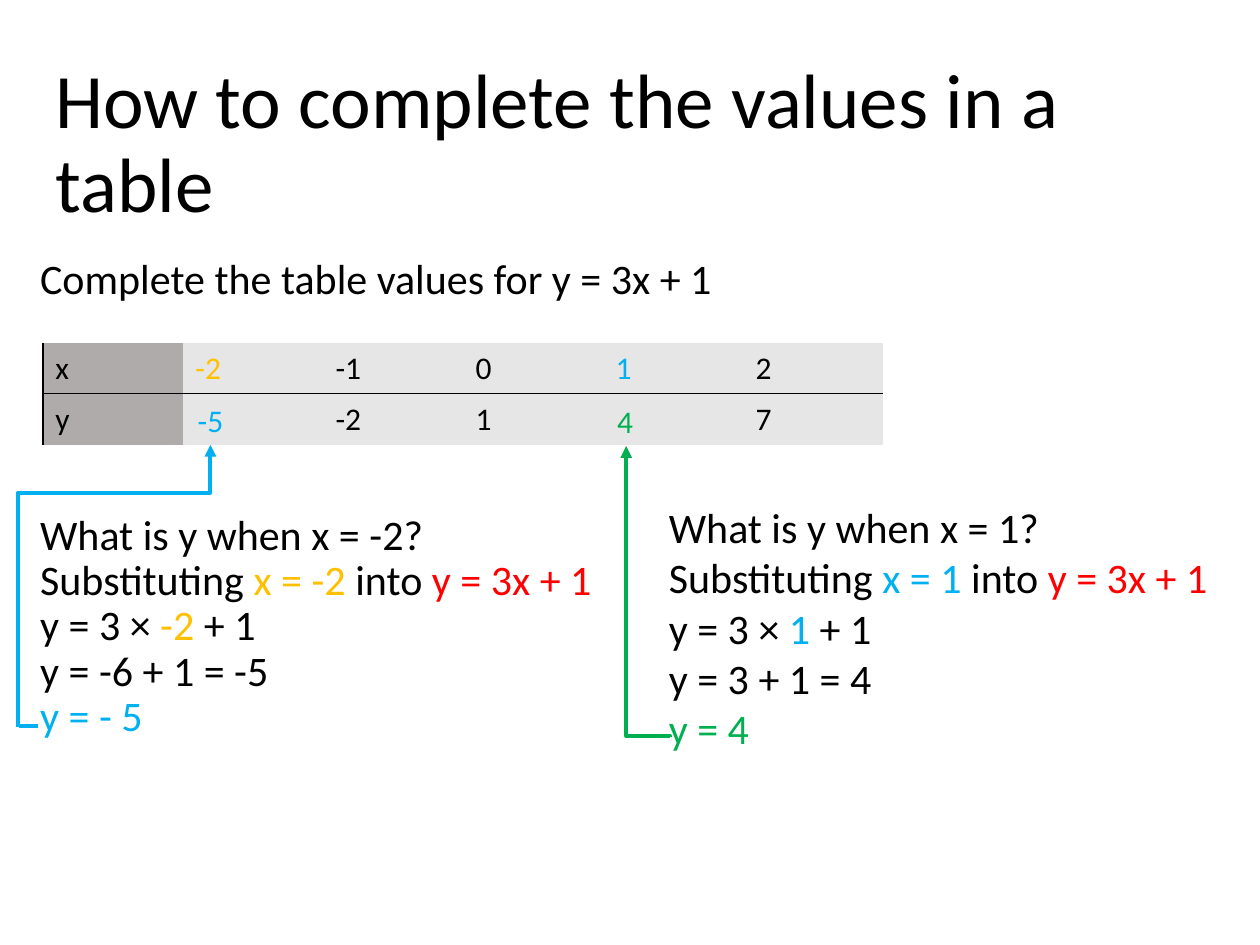
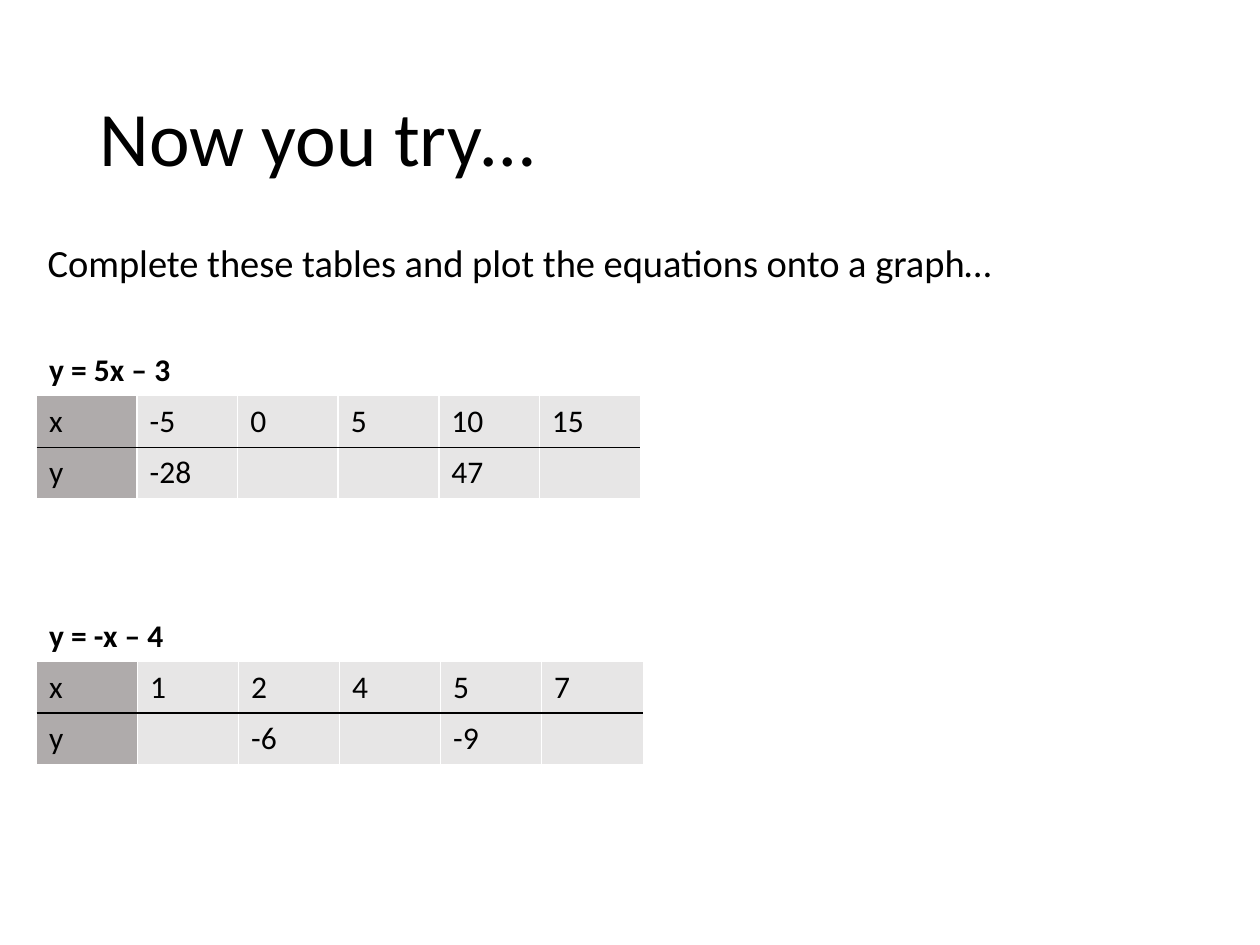
from dataclasses import dataclass

from lxml import etree
from pptx import Presentation
from pptx.dml.color import RGBColor
from pptx.enum import shapes, text
from pptx.oxml import ns
from pptx.util import Inches, Pt


@dataclass(frozen=True)
class Theme:
    font: str = "Calibri"
    black: str = "000000"
    white: str = "FFFFFF"
    header_grey: str = "AFABAB"
    cell_grey: str = "E7E6E6"
    amber: str = "FFC000"
    blue: str = "00B0F0"
    green: str = "00B050"
    red: str = "FF0000"
    title_size: int = 44
    body_size: int = 24
    task_size: int = 22
    table_size: int = 18
    rule_width: float = 1
    arrow_width: float = 2.25
    row_height: float = 0.405


THEME = Theme()
NO_STYLE_NO_GRID = "{2D5ABB26-0587-4C30-8999-92F81FD0307C}"


def style_span(span, size, colour=THEME.black, bold=False):
    span.font.name = THEME.font
    span.font.size = Pt(size)
    span.font.bold = bold
    span.font.color.rgb = RGBColor.from_string(colour)


def add_text(page, area, lines, size=THEME.body_size, spacing=1.0,
             anchor=text.MSO_ANCHOR.TOP, wrap=True):
    """Each line is a list of (words, colour) pairs."""
    box = page.shapes.add_textbox(*map(Inches, area))
    frame = box.text_frame
    frame.word_wrap = wrap
    frame.vertical_anchor = anchor
    for index, line in enumerate(lines):
        para = frame.paragraphs[0] if index == 0 else frame.add_paragraph()
        para.line_spacing = spacing
        for words, colour in line:
            span = para.add_run()
            span.text = words
            style_span(span, size, colour)


def add_title(page, area, words):
    add_text(page, area, [[(words, THEME.black)]], THEME.title_size, 0.9,
             text.MSO_ANCHOR.MIDDLE)


def set_border(cell, side, colour):
    """Draw one side of a cell: L, R, T or B."""
    line = etree.Element(ns.qn(f"a:ln{side}"), w=str(Pt(THEME.rule_width)))
    fill = etree.SubElement(line, ns.qn("a:solidFill"))
    etree.SubElement(fill, ns.qn("a:srgbClr"), val=colour)
    properties = cell._tc.get_or_add_tcPr()
    borders = properties.findall(ns.qn("a:lnL")) + properties.findall(ns.qn("a:lnR"))
    borders += properties.findall(ns.qn("a:lnT"))
    properties.insert(len(borders), line)


def fill_cell(cell, words, fill, colour=THEME.black, bold=False):
    cell.fill.solid()
    cell.fill.fore_color.rgb = RGBColor.from_string(fill)
    cell.text_frame.text = words
    for span in cell.text_frame.paragraphs[0].runs:
        style_span(span, THEME.table_size, colour, bold)


def add_value_table(page, left, top, width, x_values, y_values,
                    caption=None, x_colours=None):
    """Draw x over y; a captioned table also has white column rules."""
    rows = [["x", *x_values], ["y", *y_values]]
    first = 1 if caption else 0
    count = len(rows[0])
    height = THEME.row_height * (len(rows) + first)
    frame = page.shapes.add_table(len(rows) + first, count, Inches(left),
                                  Inches(top), Inches(width), Inches(height))
    table = frame.table
    table.first_row = table.horz_banding = False
    table._tbl.tblPr.find(ns.qn("a:tableStyleId")).text = NO_STYLE_NO_GRID
    if caption:
        table.cell(0, 0).merge(table.cell(0, count - 1))
        fill_cell(table.cell(0, 0), caption, THEME.white, bold=True)
    for r, values in enumerate(rows):
        for c, value in enumerate(values):
            cell = table.cell(r + first, c)
            fill = THEME.header_grey if c == 0 else THEME.cell_grey
            colours = x_colours if r == 0 and x_colours else {}
            fill_cell(cell, value, fill, colours.get(value, THEME.black))
            if caption and c > 0:
                set_border(cell, "L", THEME.white)
            elif not caption and c == 0:
                set_border(cell, "L", THEME.black)
            if caption and 0 < c < count - 1:
                set_border(cell, "R", THEME.white)
            set_border(cell, "B" if r == 0 else "T", THEME.black)


def add_line(page, kind, start, end, colour):
    line = page.shapes.add_connector(kind, *map(Inches, (*start, *end)))
    line.line.color.rgb = RGBColor.from_string(colour)
    line.line.width = Pt(THEME.arrow_width)
    etree.SubElement(line._element.spPr, ns.qn("a:effectLst"))
    return line


def add_rising_arrow(page, start, end, bend, colour):
    """Go up, across at the bend (a share of the rise), then up to the end."""
    (x1, y1), (x2, y2) = start, end
    middle_x, middle_y = (x1 + x2) / 2, (y1 + y2) / 2
    half_x, half_y = (x2 - x1) / 2, (y2 - y1) / 2
    # The elbow runs sideways until it is turned by 270 degrees.
    arrow = add_line(page, shapes.MSO_CONNECTOR.ELBOW,
                     (middle_x + half_y, middle_y - half_x),
                     (middle_x - half_y, middle_y + half_x), colour)
    properties = arrow._element.spPr
    properties.find(ns.qn("a:xfrm")).set("rot", str(270 * 60000))
    geometry = properties.find(ns.qn("a:prstGeom"))
    guides = geometry.find(ns.qn("a:avLst"))
    if guides is None:
        guides = etree.SubElement(geometry, ns.qn("a:avLst"))
    etree.SubElement(guides, ns.qn("a:gd"), name="adj1",
                     fmla=f"val {round(bend * 100000)}")
    etree.SubElement(arrow.line._get_or_add_ln(), ns.qn("a:tailEnd"), type="triangle")


def working_lines(x, x_colour, sum_line, answer, answer_colour):
    black = THEME.black
    return [
        [(f"What is y when x = {x}?", black)],
        [("Substituting ", black), (f"x = {x} ", x_colour),
         ("into ", black), ("y = 3x + 1", THEME.red)],
        [("y = 3 × ", black), (x, x_colour), (" + 1", black)],
        [(sum_line, black)],
        [(answer, answer_colour)],
    ]


def build_example(page):
    add_title(page, (0.34, 0.43, 8.25, 1.45), "How to complete the values in a table")
    add_text(page, (0.22, 2, 9.5, 0.5),
             [[("Complete the table values for y = 3x + 1", THEME.black)]], spacing=0.9)
    add_text(page, (0.22, 4.03, 4.75, 2),
             working_lines("-2", THEME.amber, "y = -6 + 1 = -5", "y = - 5", THEME.blue),
             spacing=0.9)
    add_value_table(page, 0.34, 2.72, 6.67, ["-2", "-1", "0", "1", "2"],
                    ["", "-2", "1", "", "7"],
                    x_colours={"-2": THEME.amber, "1": THEME.blue})
    for area, answer, colour in (((1.47, 3.13, 0.41, 0.4), "-5", THEME.blue),
                                 ((4.8, 3.14, 0.33, 0.4), "4", THEME.green)):
        add_text(page, area, [[(answer, colour)]], THEME.table_size, wrap=False)
    add_text(page, (5.21, 3.93, 4.51, 2.93),
             working_lines("1", THEME.blue, "y = 3 + 1 = 4", "y = 4", THEME.green),
             wrap=False)
    add_rising_arrow(page, (0.14, 5.77), (1.67, 3.53), 0.83, THEME.blue)
    add_rising_arrow(page, (5.32, 5.85), (4.97, 3.54), 0.004, THEME.green)
    add_line(page, shapes.MSO_CONNECTOR.STRAIGHT, (0.15, 5.76), (0.3, 5.76), THEME.blue)


def build_exercise(page):
    add_title(page, (0.69, 0.4, 8.62, 1.45), "Now you try…")
    add_text(page, (0.28, 1.85, 7.84, 0.47),
             [[("Complete these tables and plot the equations onto a graph…", THEME.black)]],
             THEME.task_size)
    add_value_table(page, 0.29, 2.74, 4.79, ["-5", "0", "5", "10", "15"],
                    ["-28", "", "", "47", ""], caption="y = 5x – 3")
    add_value_table(page, 0.29, 4.85, 4.81, ["1", "2", "4", "5", "7"],
                    ["", "-6", "", "-9", ""], caption="y = -x – 4")


def main():
    deck = Presentation()
    deck.slide_width, deck.slide_height = Inches(10), Inches(7.5)
    for build in (build_example, build_exercise):
        build(deck.slides.add_slide(deck.slide_layouts[6]))
    deck.save("out.pptx")


if __name__ == "__main__":
    main()
